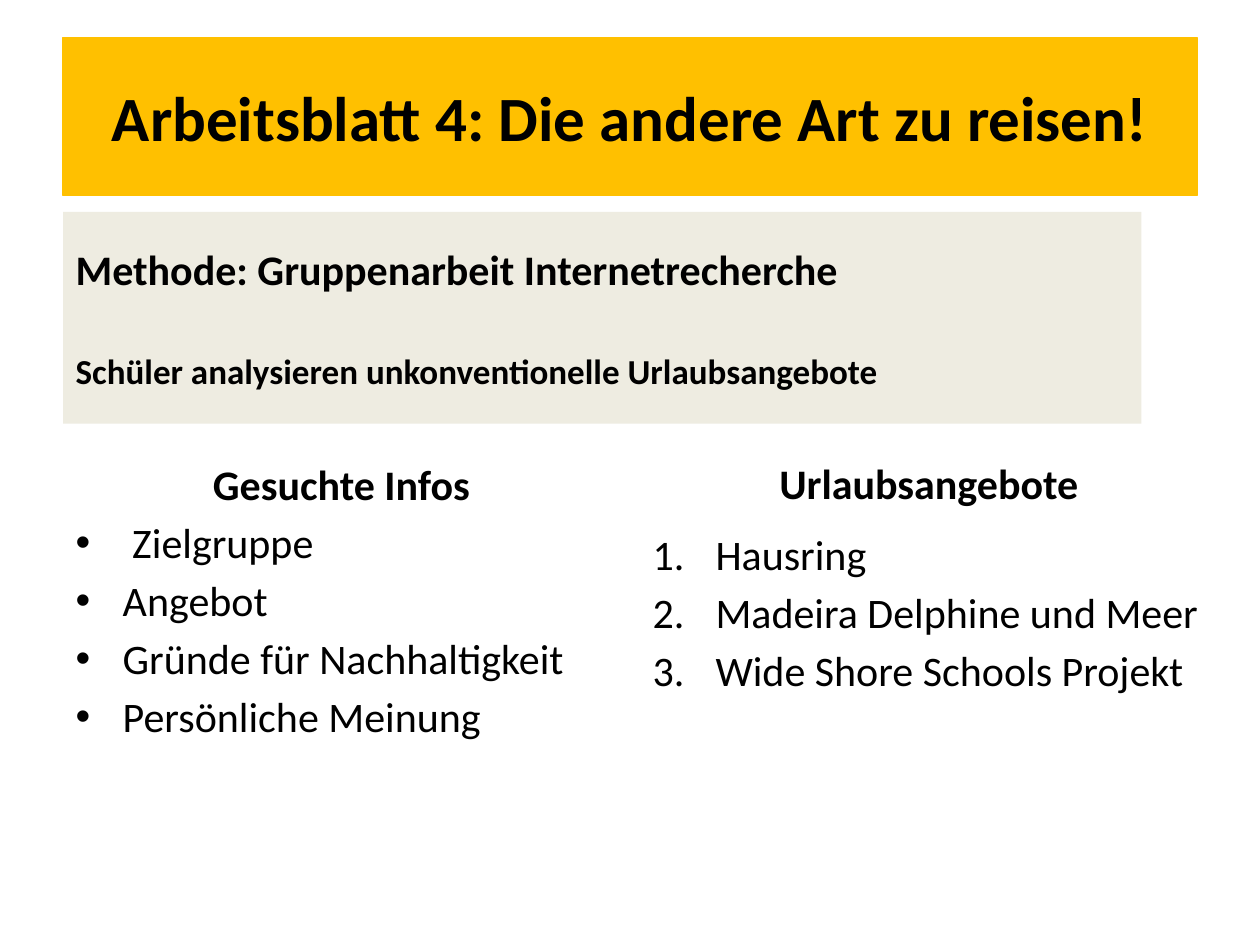
from dataclasses import dataclass

from lxml.etree import SubElement
from pptx import Presentation
from pptx.dml.color import RGBColor
from pptx.enum.text import MSO_ANCHOR as Anchor, MSO_AUTO_SIZE as AutoSize, PP_ALIGN as Align
from pptx.oxml.ns import qn
from pptx.util import Cm, Pt

COLORS = {"title": "FFC000", "method": "EEECE1", "text": "000000"}
COMPARISON_LAYOUT = 4
BULLET = ("a:buChar", {"char": "•"})
NUMBER = ("a:buAutoNum", {"type": "arabicPeriod"})
NO_MARKER = ("a:buNone", {})


@dataclass
class Line:
    text: str
    size: float = 24
    bold: bool = False
    align: Align = Align.LEFT
    before: float = 4.3
    indent: float = 0
    marker: tuple[str, dict[str, str]] = NO_MARKER


@dataclass
class Panel:
    idx: int
    left: float
    top: float
    width: float
    height: float
    lines: list[Line]
    anchor: Anchor = Anchor.TOP
    fill: str | None = None


def write_line(paragraph, line: Line) -> None:
    paragraph.text = line.text
    paragraph.alignment = line.align
    paragraph.space_before = Pt(line.before)
    properties = paragraph._p.get_or_add_pPr()
    properties.set("marL", str(Cm(line.indent)))
    properties.set("indent", str(-Cm(line.indent)))
    tag, attributes = line.marker
    SubElement(properties, qn(tag), attributes)
    font = paragraph.font
    font.name = "Calibri"
    font.size = Pt(line.size)
    font.bold = line.bold
    font.color.rgb = RGBColor.from_string(COLORS["text"])


def draw_panel(slide, panel: Panel) -> None:
    holder = slide.placeholders[panel.idx]
    holder.left, holder.top = Cm(panel.left), Cm(panel.top)
    holder.width, holder.height = Cm(panel.width), Cm(panel.height)
    if panel.fill:
        holder.fill.solid()
        holder.fill.fore_color.rgb = RGBColor.from_string(COLORS[panel.fill])
    frame = holder.text_frame
    frame.word_wrap = True
    frame.auto_size = AutoSize.NONE
    frame.vertical_anchor = panel.anchor
    for number, line in enumerate(panel.lines):
        write_line(frame.add_paragraph() if number else frame.paragraphs[0], line)


def heading(text: str) -> Line:
    return Line(text, bold=True, align=Align.CENTER)


def main() -> None:
    wanted = [" Zielgruppe", "Angebot", "Gründe für Nachhaltigkeit", "Persönliche Meinung"]
    offers = ["Hausring", "Madeira Delphine und Meer", "Wide Shore Schools Projekt"]
    panels = [
        Panel(0, 1.27, 0.76, 22.86, 3.18,
              [Line("Arbeitsblatt 4: Die andere Art zu reisen!", 36, True, Align.CENTER, 0)],
              Anchor.MIDDLE, "title"),
        Panel(1, 1.27, 4.27, 21.74, 4.27,
              [Line("Methode: Gruppenarbeit Internetrecherche", bold=True),
               Line("Schüler analysieren unkonventionelle Urlaubsangebote", 20, True, before=32)],
              Anchor.MIDDLE, "method"),
        Panel(2, 1.27, 9.12, 11.23, 7.9,
              [heading("Gesuchte Infos"),
               *(Line(info, indent=0.95, marker=BULLET) for info in wanted)]),
        Panel(3, 13.11, 8.94, 11.23, 1.6, [heading("Urlaubsangebote")], Anchor.MIDDLE),
        Panel(4, 12.9, 10.52, 11.84, 4.88,
              [Line(offer, indent=1.27, marker=NUMBER) for offer in offers]),
    ]

    deck = Presentation()
    deck.slide_width, deck.slide_height = Cm(25.4), Cm(19.05)
    slide = deck.slides.add_slide(deck.slide_layouts[COMPARISON_LAYOUT])
    for panel in panels:
        draw_panel(slide, panel)
    border = slide.shapes.title.line
    border.color.rgb = RGBColor.from_string(COLORS["title"])
    border.width = Pt(0.75)
    deck.save("out.pptx")


if __name__ == "__main__":
    main()
